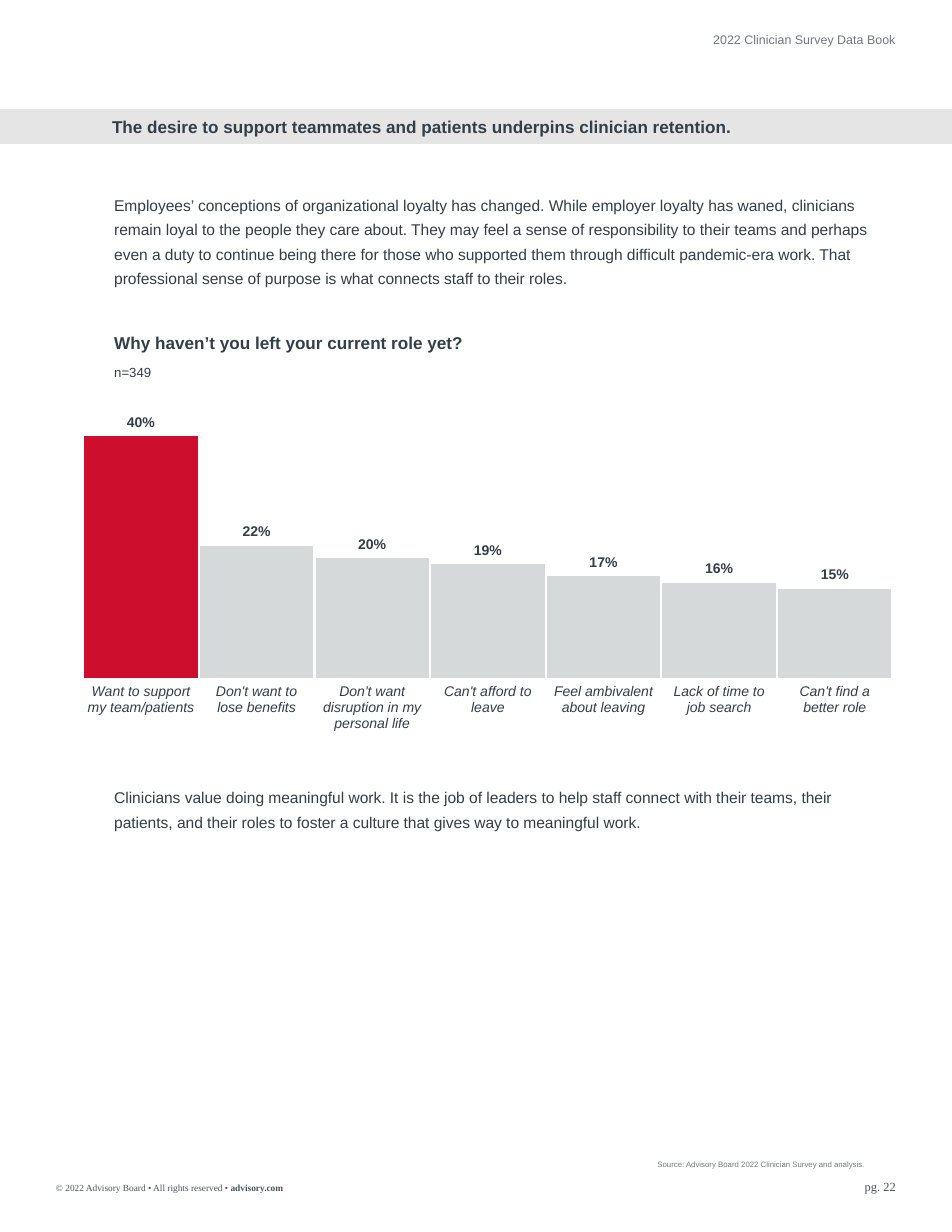
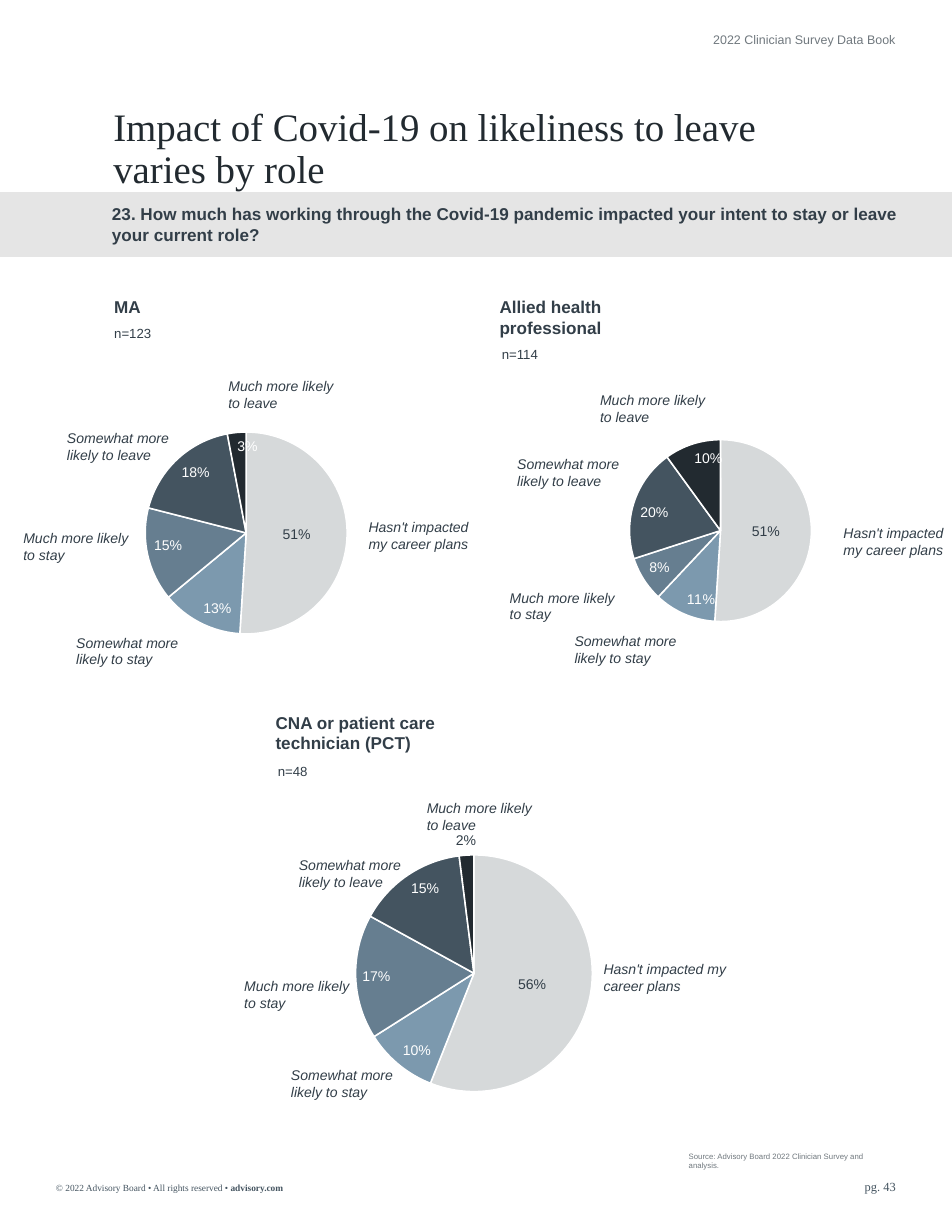
from pptx import Presentation
from pptx.chart.data import CategoryChartData
from pptx.dml.color import RGBColor
from pptx.enum.chart import XL_CHART_TYPE, XL_LABEL_POSITION, XL_TICK_MARK
from pptx.enum.shapes import MSO_SHAPE
from pptx.enum.text import MSO_ANCHOR, MSO_AUTO_SIZE, PP_ALIGN
from pptx.oxml import parse_xml
from pptx.oxml.ns import nsdecls
from pptx.util import Cm, Pt

BAR, PIE = XL_CHART_TYPE.COLUMN_CLUSTERED, XL_CHART_TYPE.PIE
OUT, IN, MID = (XL_LABEL_POSITION.OUTSIDE_END, XL_LABEL_POSITION.INSIDE_END,
                XL_LABEL_POSITION.CENTER)
NO_TICK = XL_TICK_MARK.NONE
RECT = MSO_SHAPE.RECTANGLE
TOP, CENTRE, FOOT = MSO_ANCHOR.TOP, MSO_ANCHOR.MIDDLE, MSO_ANCHOR.BOTTOM
LEFT, RIGHT = PP_ALIGN.LEFT, PP_ALIGN.RIGHT
NO_FIT = MSO_AUTO_SIZE.NONE

HEX = {
    "ink": "323E48", "dark": "222A30", "slate": "445460", "steel": "667E90",
    "sky": "7C99AE", "mist": "D6D9DA", "band": "E5E5E5", "note": "70787E",
    "red": "CE0E2D", "white": "FFFFFF",
}
RGB = {name: RGBColor.from_string(code) for name, code in HEX.items()}
SANS, SERIF = "Arial", "Times New Roman"

# Each style: font values, colour, paragraph values, anchor
BASE = {"alignment": LEFT, "space_before": Pt(0)}
STYLES = {
    "title": ({"name": SERIF, "size": Pt(25), "bold": False}, "dark",
              {**BASE, "line_spacing": 0.9}, TOP),
    "head": ({"name": SANS, "size": Pt(11), "bold": True}, "ink", BASE, TOP),
    "body": ({"name": SANS, "size": Pt(10)}, "ink",
             {**BASE, "line_spacing": 1.3}, TOP),
    "count": ({"name": SANS, "size": Pt(8.5)}, "ink", BASE, TOP),
    "label": ({"name": SANS, "size": Pt(9), "italic": True}, "ink", BASE, TOP),
    "source": ({"name": SANS, "size": Pt(5)}, "note", BASE, FOOT),
    "book": ({"name": SANS, "size": Pt(8)}, "note",
             {**BASE, "alignment": RIGHT, "line_spacing": 0.9}, CENTRE),
    "page": ({"name": SERIF, "size": Pt(8)}, "slate",
             {**BASE, "alignment": RIGHT}, TOP),
    "rights": ({"name": SERIF, "size": Pt(6)}, "slate", BASE, TOP),
}


def write(slide, style, box, *parts, shape=None):
    """Put the parts, one run each, in a styled text box or the given shape."""
    font, colour, para_format, anchor = STYLES[style]
    place = [Cm(n) for n in box]
    shape = shape or slide.shapes.add_textbox(*place)
    shape.left, shape.top, shape.width, shape.height = place
    frame = shape.text_frame
    fit = {"word_wrap": True, "auto_size": NO_FIT, "vertical_anchor": anchor,
           "margin_left": 0, "margin_right": 0, "margin_top": 0,
           "margin_bottom": 0}
    for key, value in fit.items():
        setattr(frame, key, value)
    para = frame.paragraphs[0]
    for key, value in para_format.items():
        setattr(para, key, value)
    for part in parts:
        run = para.add_run()
        run.text = part
        for key, value in font.items():
            setattr(run.font, key, value)
        run.font.color.rgb = RGB[colour]
    return para


def draw(slide, kind, cats, vals, box, inner):
    """Add a one-series chart; inner is the plot's x, y, w, h as fractions."""
    data = CategoryChartData(number_format="0%")
    data.categories = cats
    data.add_series("Series 1", vals)
    chart = slide.shapes.add_chart(kind, *[Cm(n) for n in box], data).chart
    chart.has_legend = chart.has_title = False
    chart.font.name, chart.font.size = SANS, Pt(9)
    chart.font.color.rgb = RGB["ink"]
    area = chart.plots[0]._element.getparent()
    for old in area.findall(area.tag.replace("plotArea", "layout")):
        area.remove(old)
    sides = "".join(f'<c:{key} val="{n:.3f}"/>' for key, n in zip("xywh", inner))
    area.insert(0, parse_xml(
        f'<c:layout {nsdecls("c")}><c:manualLayout><c:layoutTarget val="inner"/>'
        f'<c:xMode val="edge"/><c:yMode val="edge"/>{sides}'
        '</c:manualLayout></c:layout>'))
    labels = chart.plots[0].series[0].data_labels
    labels.show_value = True
    labels.number_format, labels.number_format_is_linked = "0%", False
    labels.font.name, labels.font.size = SANS, Pt(9)
    return chart


deck = Presentation()
deck.slide_width, deck.slide_height = Cm(21.59), Cm(27.94)
layout = deck.slide_layouts[5]

# Shared parts: band, title, book name, source, footer
SHEETS = [
    {"page": "pg. 22", "band": (2.49, 0.76), "source": (14.91, 26.31, 5.41, 0.2),
     "style": "head", "box": (2.54, 2.64, 17.5, 0.48),
     "title": "The desire to support teammates and patients underpins "
              "clinician retention."},
    {"page": "pg. 43", "band": (4.39, 1.42), "source": (15.62, 26.11, 4.6, 0.43),
     "style": "title", "box": (2.57, 2.44, 16.87, 1.93),
     "title": "Impact of Covid-19 on likeliness to leave varies by role"},
]
for sheet in SHEETS:
    slide = deck.slides.add_slide(layout)
    top, high = sheet["band"]
    band = slide.shapes.add_shape(RECT, Cm(-0.05), Cm(top), Cm(22.4), Cm(high))
    band.shadow.inherit = False
    band.fill.solid()
    band.fill.fore_color.rgb = band.line.color.rgb = RGB["band"]
    band.line.width = Pt(1.5)
    slide.shapes._spTree.insert(2, band._element)  # behind the title
    write(slide, sheet["style"], sheet["box"], sheet["title"],
          shape=slide.shapes.title)
    write(slide, "book", (13.21, 0.78, 7.11, 0.3), "2022 Clinician Survey Data Book")
    write(slide, "source", sheet["source"],
          "Source: Advisory Board 2022 Clinician Survey and analysis.")
    write(slide, "page", (18.77, 26.75, 1.55, 0.33), sheet["page"])
    rights = write(slide, "rights", (1.27, 26.8, 5.74, 0.25),
                   "© 2022 Advisory Board • All rights reserved • ", "advisory.com")
    rights.runs[1].font.bold = True

# Slide 1: reasons to stay
first, second = deck.slides
write(first, "body", (2.59, 4.32, 17.07, 2.16),
      "Employees’ conceptions of organizational loyalty has changed. While "
      "employer loyalty has waned, clinicians remain loyal to the people they "
      "care about. They may feel a sense of responsibility to their teams and "
      "perhaps even a duty to continue being there for those who supported them "
      "through difficult pandemic-era work. That professional sense of purpose "
      "is what connects staff to their roles.")
write(first, "head", (2.59, 7.54, 9, 0.48),
      "Why haven’t you left your current role yet?")
write(first, "count", (2.59, 8.26, 1.5, 0.36), "n=349")
write(first, "body", (2.59, 17.75, 17.07, 1.04),
      "Clinicians value doing meaningful work. It is the job of leaders to help "
      "staff connect with their teams, their patients, and their roles to foster "
      "a culture that gives way to meaningful work.")

REASONS = {
    "Want to support my team/patients": 0.4,
    "Don't want to lose benefits": 0.22,
    "Don't want disruption in my personal life": 0.2,
    "Can't afford to leave": 0.19,
    "Feel ambivalent about leaving": 0.17,
    "Lack of time to job search": 0.16,
    "Can't find a better role": 0.15,
}
chart = draw(first, BAR, list(REASONS), list(REASONS.values()),
             (1.83, 7.75, 18.44, 10.41), (0.003, 0.137, 0.996, 0.598))
plot = chart.plots[0]
plot.gap_width, plot.vary_by_categories = 0, False
bars = plot.series[0]
bars.data_labels.position = OUT
bars.data_labels.font.bold = True
bars.data_labels.font.color.rgb = RGB["ink"]
for fill, name in ((bars.format.fill, "mist"),
                   (bars.points[0].format.fill, "red")):
    fill.solid()
    fill.fore_color.rgb = RGB[name]
for line in (bars.format.line, bars.points[0].format.line):
    line.color.rgb, line.width = RGB["white"], Pt(1.5)
scale = chart.value_axis
scale.minimum_scale, scale.maximum_scale = 0, 0.45
scale.has_major_gridlines = scale.visible = False
axis = chart.category_axis
axis.major_tick_mark = axis.minor_tick_mark = NO_TICK
axis.format.line.fill.background()
font = axis.tick_labels.font
font.name, font.size, font.italic = SANS, Pt(9), True
font.color.rgb = RGB["ink"]

# Slide 2: one pie per role
write(second, "head", (2.54, 4.62, 18.44, 0.94),
      "23. How much has working through the Covid-19 pandemic impacted your "
      "intent to stay or leave your current role?")
ANSWERS = ["Much more likely to leave", "Somewhat more likely to leave",
           "Much more likely to stay", "Somewhat more likely to stay",
           "Hasn't impacted my career plans"]
SLICES = ["mist", "sky", "steel", "slate", "dark"]
# pie: centre x, centre y, diameter; tags: left, top, width in ANSWERS order
ROLES = [
    {"role": "MA", "head": (2.59, 6.73, 1.5, 0.48),
     "n": "n=123", "count": (2.59, 7.37),
     "vals": (0.51, 0.13, 0.15, 0.18, 0.03),
     "box": (2.18, 8.25, 6.83, 7.52), "pie": (5.58, 12.09, 4.58),
     "tags": [(5.18, 8.56, 2.57), (1.52, 9.75, 2.87), (0.53, 12.01, 2.59),
              (1.73, 14.38, 2.59), (8.36, 11.76, 2.31)]},
    {"role": "Allied health professional", "head": (11.33, 6.73, 2.5, 0.94),
     "n": "n=114", "count": (11.38, 7.85),
     "vals": (0.51, 0.11, 0.08, 0.2, 0.1),
     "box": (13.21, 9.02, 6.35, 5.99), "pie": (16.34, 12.04, 4.13),
     "tags": [(13.61, 8.89, 2.57), (11.73, 10.34, 2.57), (11.56, 13.36, 2.46),
              (13.03, 14.35, 2.87), (19.13, 11.89, 2.41)]},
    {"role": "CNA or patient care technician (PCT)",
     "head": (6.25, 16.15, 4.25, 0.94),
     "n": "n=48", "count": (6.3, 17.3),
     "vals": (0.56, 0.1, 0.17, 0.15, 0.02),
     "box": (6.55, 18.59, 8.51, 7.06), "pie": (10.75, 22.07, 5.37),
     "tags": [(9.68, 18.14, 2.46), (6.78, 19.43, 2.4), (5.54, 22.17, 2.45),
              (6.6, 24.18, 2.41), (13.69, 21.79, 2.87)]},
]
for item in ROLES:
    write(second, "head", item["head"], item["role"])
    write(second, "count", (*item["count"], 1.3, 0.36), item["n"])
    left, top, wide, high = item["box"]
    mid_x, mid_y, size = item["pie"]
    inner = ((mid_x - size / 2 - left) / wide, (mid_y - size / 2 - top) / high,
             size / wide, size / high)
    chart = draw(second, PIE, list("12345"), item["vals"], item["box"], inner)
    chart.plots[0].vary_by_categories = True
    pie = chart.plots[0].series[0]
    pie.data_labels.position = IN
    pie.data_labels.font.bold = False
    pie.data_labels.font.color.rgb = RGB["white"]
    for i, (name, value) in enumerate(zip(SLICES, item["vals"])):
        point = pie.points[i]
        point.format.fill.solid()
        point.format.fill.fore_color.rgb = RGB[name]
        point.format.line.color.rgb = RGB["white"]
        point.format.line.width = Pt(1)
        # Dark text on the pale slice and outside a very thin one
        if name == "mist" or value < 0.03:
            label = point.data_label
            label.position = MID if name == "mist" else OUT
            font = label.font
            font.name, font.size, font.bold = SANS, Pt(9), False
            font.color.rgb = RGB["ink"]
    for answer, tag in zip(ANSWERS, item["tags"]):
        write(second, "label", (*tag, 0.76), answer)

deck.save("out.pptx")
